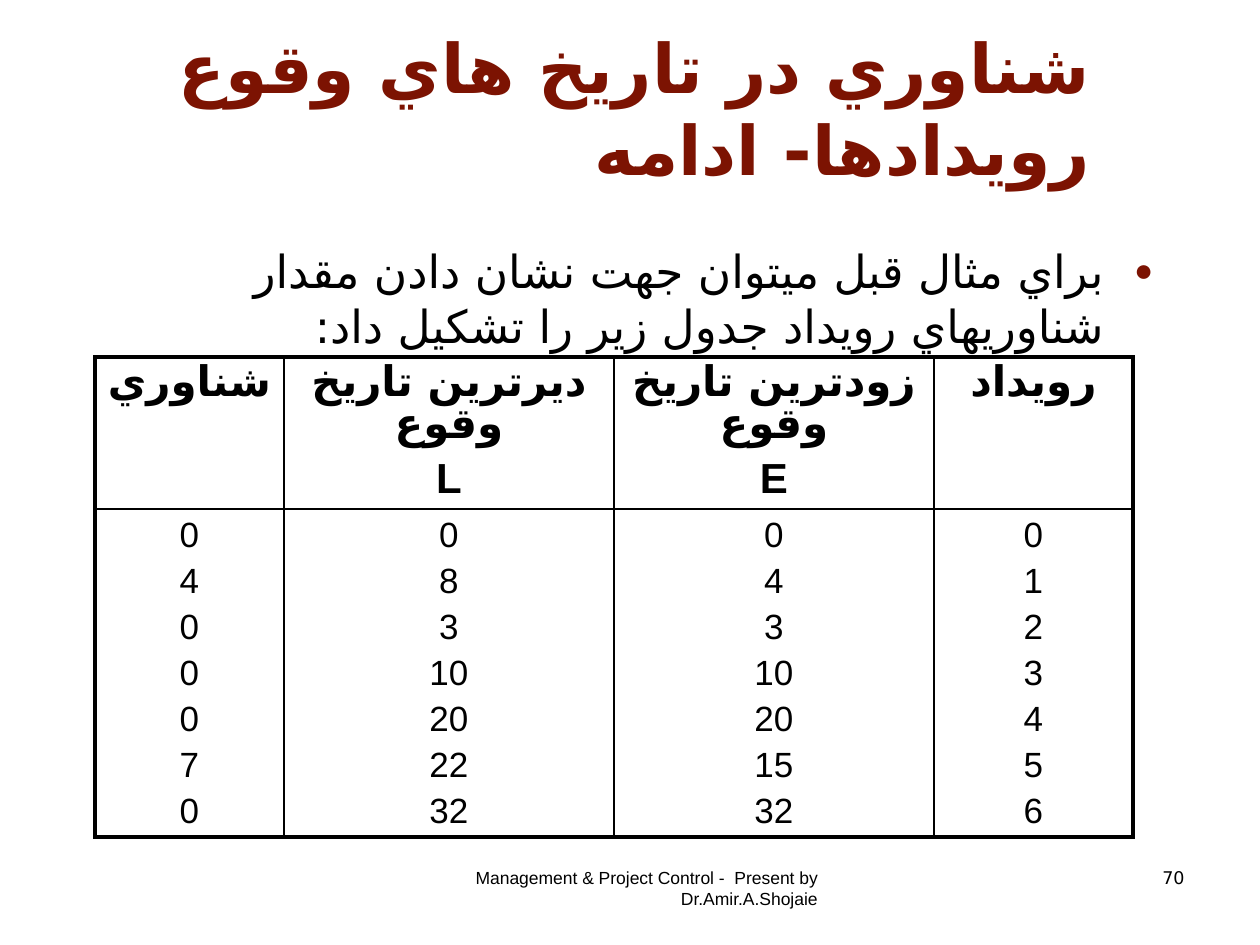
import pptx
import pptx.dml.color
import pptx.enum.text
import pptx.oxml
import pptx.oxml.ns
import pptx.util
from lxml import etree

SCALE = 914400 // 126  # EMU per px
ALIGN = pptx.enum.text.PP_ALIGN
ANCHOR = pptx.enum.text.MSO_ANCHOR
BLACK, MAROON = "000000", "7C1302"
qn = pptx.oxml.ns.qn


def write(para, text, size, color=BLACK, bold=False, align=ALIGN.RIGHT, rtl=True):
    para.alignment = align
    if rtl:
        para._p.get_or_add_pPr().set("rtl", "1")
    span = para.add_run()
    span.text = text
    span.font.color.rgb = pptx.dml.color.RGBColor.from_string(color)
    for name, value in {"name": "Arial", "size": pptx.util.Pt(size), "bold": bold}.items():
        setattr(span.font, name, value)
    etree.SubElement(span._r.rPr, qn("a:cs"), typeface="DejaVu Sans")


def place(box, left, top, width, height, anchor=ANCHOR.TOP):
    """Move the box to a px rectangle and make its text wrap at a fixed size."""
    for name, value in {"left": left, "top": top, "width": width, "height": height}.items():
        setattr(box, name, value * SCALE)
    frame = box.text_frame
    frame.word_wrap = True
    frame.auto_size = pptx.enum.text.MSO_AUTO_SIZE.NONE
    frame.vertical_anchor = anchor
    return frame.paragraphs[0]


deck = pptx.Presentation()
deck.slide_width, deck.slide_height = pptx.util.Inches(10), pptx.util.Inches(7.5)
page = deck.slides.add_slide(deck.slide_layouts[1])

# Footer and page number
for left, width, text in [
    (431, 399, "Management & Project Control -  Present by Dr.Amir.A.Shojaie"),
    (903, 294, "70"),
]:
    write(place(page.shapes.add_textbox(0, 0, 0, 0), left, 861, width, 63), text, 10)

# Title and bullet
title = place(page.shapes.title, 63, 16, 1040, 179, ANCHOR.BOTTOM)
write(title, "شناوري در تاريخ هاي وقوع رويدادها- ادامه", 39, MAROON, True)

bullet = place(page.placeholders[1], 63, 237, 1103, 607)
write(bullet, "براي مثال قبل ميتوان جهت نشان دادن مقدار شناوريهاي رويداد جدول زير را تشکيل داد:", 26)
props = bullet._p.pPr
props.set("marL", str(48 * SCALE))
props.set("indent", str(-48 * SCALE))
color = etree.SubElement(props, qn("a:buClr"))
etree.SubElement(color, qn("a:srgbClr"), val=MAROON)
etree.SubElement(props, qn("a:buSzPct"), val="70000")
etree.SubElement(props, qn("a:buFont"), typeface="Arial")
etree.SubElement(props, qn("a:buChar"), char="●")

# Table of event dates and floats
widths = [189, 330, 320, 199]
heights = [152, 327]
rows = [
    [["شناوري"], ["ديرترين تاريخ وقوع", "L"], ["زودترين تاريخ وقوع", "E"], ["رويداد"]],
    [
        [0, 4, 0, 0, 0, 7, 0],
        [0, 8, 3, 10, 20, 22, 32],
        [0, 4, 3, 10, 20, 15, 32],
        [0, 1, 2, 3, 4, 5, 6],
    ],
]
table = page.shapes.add_table(
    2, 4, 95 * SCALE, 357 * SCALE, sum(widths) * SCALE, sum(heights) * SCALE
).table
table.first_row = table.horz_banding = False
for column, width in zip(table.columns, widths):
    column.width = width * SCALE
for row, height in zip(table.rows, heights):
    row.height = height * SCALE

for r, row in enumerate(rows):
    header = r == 0
    for c, lines in enumerate(row):
        cell = table.cell(r, c)
        frame = cell.text_frame
        for i, line in enumerate(lines):
            para = frame.add_paragraph() if i else frame.paragraphs[0]
            write(para, str(line), 24 if header else 20, bold=header,
                  align=ALIGN.CENTER, rtl=False)
            if i:
                para.space_before = pptx.util.Pt(5 if header else 4)
            elif header:
                para.line_spacing = 0.85
        outer = {"lnL": c == 0, "lnR": c == 3, "lnT": r == 0, "lnB": r == 1}
        for side, thick in outer.items():
            line = etree.SubElement(cell._tc.get_or_add_tcPr(), qn("a:" + side),
                                    w=str(pptx.util.Pt(2.25 if thick else 1)))
            paint = etree.SubElement(line, qn("a:solidFill"))
            etree.SubElement(paint, qn("a:srgbClr"), val=BLACK)
        cell.fill.background()

deck.save("out.pptx")
